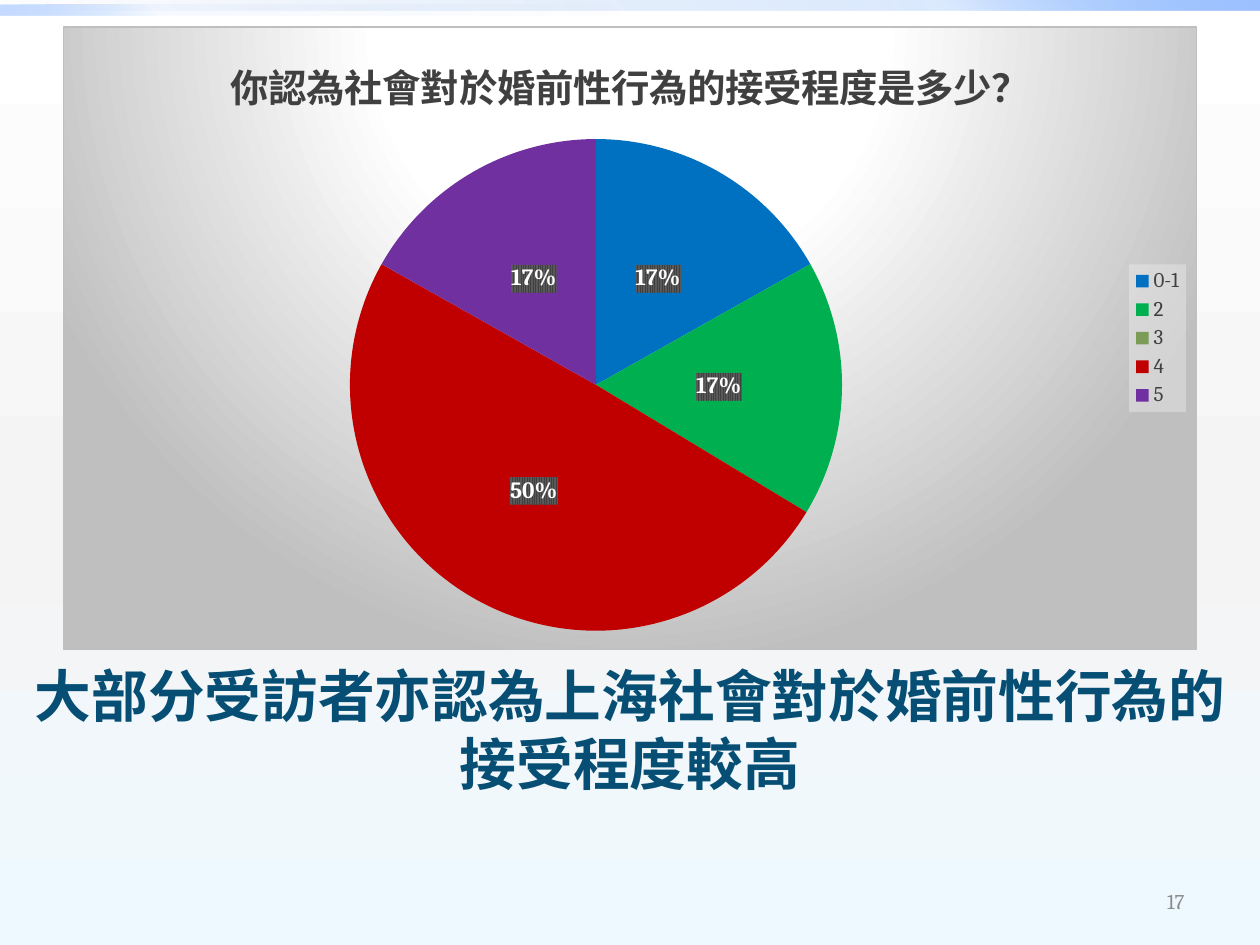
from dataclasses import dataclass

from lxml.etree import SubElement
from pptx import Presentation
from pptx.chart.data import CategoryChartData
from pptx.dml.color import RGBColor
from pptx.enum.chart import XL_CHART_TYPE as ChartType
from pptx.enum.chart import XL_LABEL_POSITION as LabelPosition
from pptx.enum.chart import XL_LEGEND_POSITION as LegendPosition
from pptx.enum.shapes import MSO_SHAPE as ShapeType
from pptx.enum.text import MSO_ANCHOR as Anchor
from pptx.enum.text import PP_ALIGN as Align
from pptx.oxml import parse_xml
from pptx.oxml.ns import nsdecls, qn
from pptx.util import Inches, Pt

WHITE = RGBColor(0xFF, 0xFF, 0xFF)
PALE_GREY = RGBColor(0xF4, 0xF4, 0xF4)
PALE_BLUE = RGBColor(0xEE, 0xF9, 0xFF)
DEEP_BLUE = RGBColor(0x00, 0x58, 0xB7)
MID_BLUE = RGBColor(0x4F, 0x95, 0xFF)
LIGHT_BLUE = RGBColor(0x9E, 0xC2, 0xFF)
TITLE_BLUE = RGBColor(0x06, 0x4E, 0x74)
SILVER = RGBColor(0xBF, 0xBF, 0xBF)
NUMBER_GREY = RGBColor(0x8C, 0x8C, 0x8C)
CHARCOAL = RGBColor(0x40, 0x40, 0x40)
BLACK = RGBColor(0x00, 0x00, 0x00)
QUESTION = "你認為社會對於婚前性行為的接受程度是多少？"
CONCLUSION = "大部分受訪者亦認為上海社會對於婚前性行為的接受程度較高"


@dataclass
class Stop:
    position: int
    color: RGBColor
    opacity: int = 100


@dataclass
class Band:
    top: float
    width: float
    angle: int
    opacities: tuple[int, int, int]


@dataclass
class Answer:
    score: str
    percent: int
    color: RGBColor


BANDS = [Band(0, 10, 315, (0, 20, 100)), Band(0.04, 5, 135, (0, 5, 60))]
ANSWERS = [
    Answer("0-1", 17, RGBColor(0x00, 0x70, 0xC0)),
    Answer("2", 17, RGBColor(0x00, 0xB0, 0x50)),
    Answer("3", 0, RGBColor(0x7B, 0x9B, 0x57)),
    Answer("4", 50, RGBColor(0xC0, 0x00, 0x00)),
    Answer("5", 17, RGBColor(0x70, 0x30, 0xA0)),
]


def linear(angle: int) -> str:
    return f'<a:lin ang="{angle * 60000}" scaled="0"/>'


def gradient_xml(stops: list[Stop], direction: str) -> str:
    marks = "".join(
        f'<a:gs pos="{stop.position * 1000}"><a:srgbClr val="{stop.color}">'
        f'<a:alpha val="{stop.opacity * 1000}"/></a:srgbClr></a:gs>'
        for stop in stops
    )
    return (f'<a:gradFill {nsdecls("a")} rotWithShape="1">'
            f"<a:gsLst>{marks}</a:gsLst>{direction}</a:gradFill>")


def replace_solid(properties, fill: str) -> None:
    properties.replace(properties.find(qn("a:solidFill")), parse_xml(fill))


def chart_properties(content: str):
    return parse_xml(f'<c:spPr {nsdecls("c", "a")}>{content}</c:spPr>')


def set_font(font, size: float, color: RGBColor, name: str = "Cambria", bold: bool = False) -> None:
    font.size = Pt(size)
    font.color.rgb = color
    font.name = name
    font.bold = bold


def add_band(slide, band: Band) -> None:
    shape = slide.shapes.add_shape(
        ShapeType.RECTANGLE, 0, Inches(band.top), Inches(band.width), Inches(0.08))
    shape.shadow.inherit = False
    shape.line.fill.background()
    shape.fill.solid()
    colors = (DEEP_BLUE, MID_BLUE, LIGHT_BLUE)
    stops = [Stop(*values) for values in zip((0, 75, 100), colors, band.opacities)]
    replace_solid(shape.element.spPr, gradient_xml(stops, linear(band.angle)))


def add_labels(plot_series) -> None:
    labels = plot_series.data_labels
    labels.show_percentage = True
    labels.show_value = False
    labels.number_format = "0%"
    labels.number_format_is_linked = False
    labels.position = LabelPosition.CENTER
    set_font(labels.font, 13.3, WHITE, bold=True)
    element = plot_series.points[0].data_label and plot_series._element.find(qn("c:dLbls"))
    pattern = ('<a:pattFill prst="narVert"><a:fgClr><a:srgbClr val="404040"/></a:fgClr>'
               '<a:bgClr><a:srgbClr val="595959"/></a:bgClr></a:pattFill>')
    element.find(qn("c:txPr")).addprevious(chart_properties(pattern))
    empty = [index for index, answer in enumerate(ANSWERS) if not answer.percent]
    for position, index in enumerate(empty):
        element.insert(position, parse_xml(
            f'<c:dLbl {nsdecls("c")}><c:idx val="{index}"/><c:delete val="1"/></c:dLbl>'))


def place_plot(chart, left: float, top: float, width: float, height: float) -> None:
    area = chart.element.find(".//" + qn("c:plotArea"))
    for existing in area.findall(qn("c:layout")):
        area.remove(existing)
    layout = parse_xml(f'<c:layout {nsdecls("c")}/>')
    manual = SubElement(layout, qn("c:manualLayout"))
    settings = {"layoutTarget": "inner", "xMode": "edge", "yMode": "edge",
                "x": left, "y": top, "w": width, "h": height}
    for tag, value in settings.items():
        SubElement(manual, qn(f"c:{tag}")).set("val", str(value))
    area.insert(0, layout)


def add_survey_chart(slide) -> None:
    data = CategoryChartData()
    data.categories = [answer.score for answer in ANSWERS]
    data.add_series(QUESTION, [answer.percent for answer in ANSWERS])
    chart = slide.shapes.add_chart(
        ChartType.PIE, Inches(0.5), Inches(0.21), Inches(9), Inches(4.95), data).chart
    set_font(chart.font, 10, BLACK)

    chart.has_title = True
    title_run = chart.chart_title.text_frame.paragraphs[0].add_run()
    title_run.text = QUESTION
    set_font(title_run.font, 22, CHARCOAL, bold=True)

    chart.has_legend = True
    chart.legend.position = LegendPosition.RIGHT
    chart.legend.include_in_layout = False
    set_font(chart.legend.font, 12, CHARCOAL)
    legend_fill = ('<a:solidFill><a:srgbClr val="F2F2F2"><a:alpha val="39000"/>'
                   "</a:srgbClr></a:solidFill>")
    chart.legend._element.find(qn("c:txPr")).addprevious(chart_properties(legend_fill))

    plot = chart.plots[0]
    plot.vary_by_categories = True
    plot_series = plot.series[0]
    for index, answer in enumerate(ANSWERS):
        fill = plot_series.points[index].format.fill
        fill.solid()
        fill.fore_color.rgb = answer.color
    add_labels(plot_series)
    place_plot(chart, 0.25, 0.18, 0.44, 0.79)

    circle = ('<a:path path="circle"><a:fillToRect l="50000" t="-80000" '
              'r="50000" b="180000"/></a:path>')
    stops = [Stop(0, WHITE), Stop(39, WHITE), Stop(100, SILVER)]
    border = f'<a:ln w="9525"><a:solidFill><a:srgbClr val="{SILVER}"/></a:solidFill></a:ln>'
    chart.element.find(qn("c:txPr")).addprevious(
        chart_properties(gradient_xml(stops, circle) + border))


def write_text(shape, text: str, alignment: Align, **font) -> None:
    frame = shape.text_frame
    frame.word_wrap = True
    frame.vertical_anchor = Anchor.MIDDLE
    paragraph = frame.paragraphs[0]
    paragraph.alignment = alignment
    run = paragraph.add_run()
    run.text = text
    set_font(run.font, **font)


def main() -> None:
    presentation = Presentation()
    presentation.slide_width, presentation.slide_height = Inches(10), Inches(7.5)
    slide = presentation.slides.add_slide(presentation.slide_layouts[5])
    slide.background.fill.solid()
    stops = [Stop(0, WHITE), Stop(55, PALE_GREY), Stop(100, PALE_BLUE)]
    replace_solid(slide.element.find(".//" + qn("p:bgPr")), gradient_xml(stops, linear(90)))
    for band in BANDS:
        add_band(slide, band)

    title = slide.shapes.title
    title.left, title.top, title.width, title.height = map(Inches, (0, 5.16, 10, 1.25))
    write_text(title, CONCLUSION, Align.CENTER,
               size=32.4, color=TITLE_BLUE, name="Calibri", bold=True)
    add_survey_chart(slide)
    number = slide.shapes.add_textbox(*map(Inches, (7.17, 6.95, 2.33, 0.4)))
    write_text(number, "17", Align.RIGHT, size=12, color=NUMBER_GREY)
    presentation.save("out.pptx")


if __name__ == "__main__":
    main()
